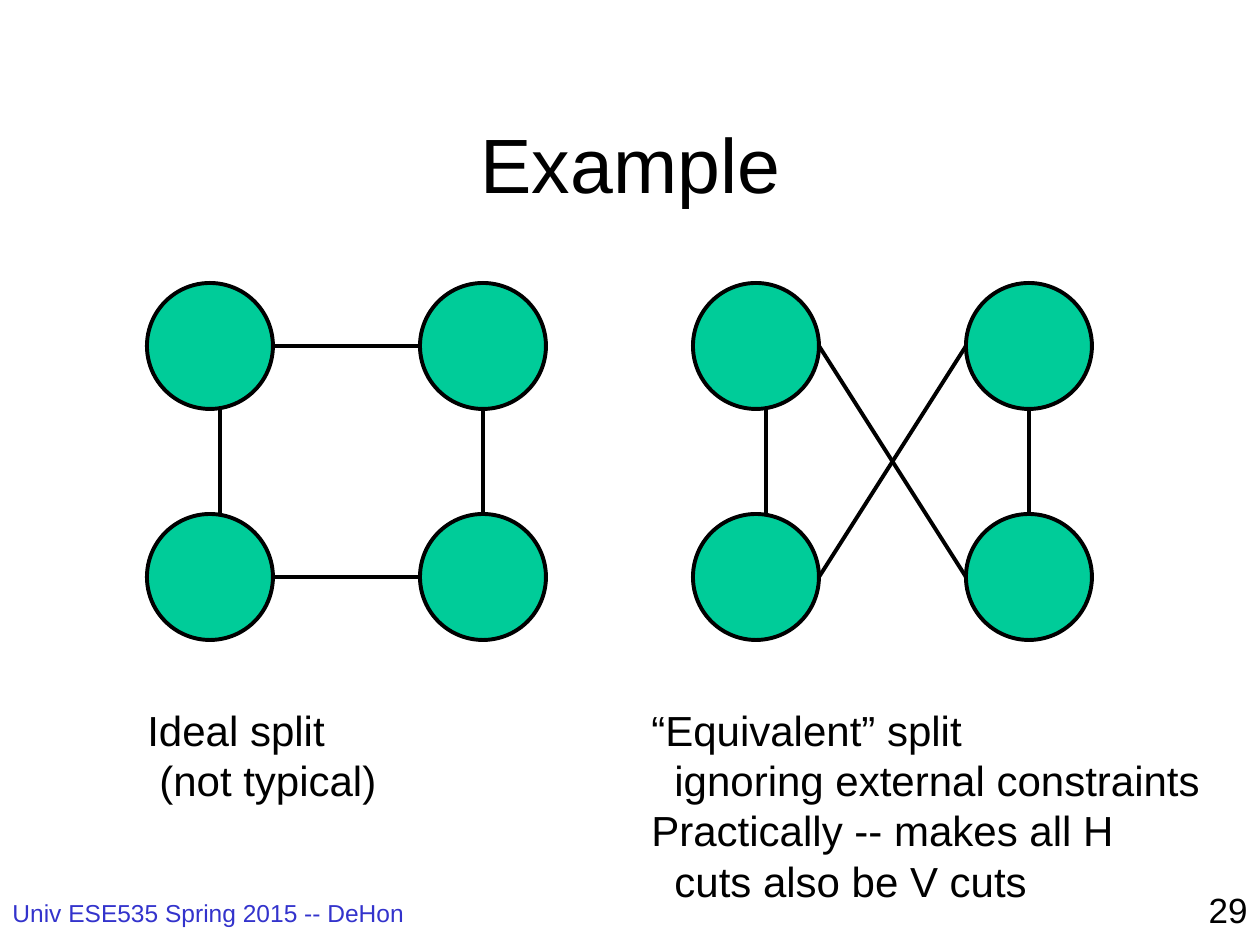
import pptx
import pptx.dml.color
import pptx.enum.shapes
import pptx.enum.text
import pptx.oxml.ns
import pptx.util
import lxml.etree

PX = 914400 / 126
BLACK = pptx.dml.color.RGBColor(0x00, 0x00, 0x00)
BLUE = pptx.dml.color.RGBColor(0x33, 0x33, 0xCC)
GREEN = pptx.dml.color.RGBColor(0x00, 0xCC, 0x99)
ALIGN = pptx.enum.text.PP_ALIGN
ANCHOR = pptx.enum.text.MSO_ANCHOR

DIAMETER = 126
RADIUS = DIAMETER // 2
COLUMN_STEP = 273
ROW_STEP = 231
LEFT_EDGE_X = 73
RIGHT_EDGE_X = COLUMN_STEP + RADIUS
SIDES = [
    ((RIGHT_EDGE_X, DIAMETER), (RIGHT_EDGE_X, ROW_STEP)),
    ((LEFT_EDGE_X, DIAMETER), (LEFT_EDGE_X, ROW_STEP)),
]
TOP_LEFT = (DIAMETER, RADIUS)
TOP_RIGHT = (COLUMN_STEP, RADIUS)
BOTTOM_LEFT = (DIAMETER, ROW_STEP + RADIUS)
BOTTOM_RIGHT = (COLUMN_STEP, ROW_STEP + RADIUS)


def emu(*pixels):
    return [pptx.util.Emu(round(value * PX)) for value in pixels]


def apply_format(target, values):
    for name, value in values.items():
        setattr(target, name, value)


def style_line(line):
    line.color.rgb = BLACK
    line.width = pptx.util.Pt(2.25)


def add_text(slide, box, lines, size, color=BLACK, align=ALIGN.LEFT, **frame_format):
    frame = slide.shapes.add_textbox(*emu(*box)).text_frame
    apply_format(frame, {"word_wrap": True, **frame_format})
    for index, (text, indent) in enumerate(lines):
        paragraph = frame.paragraphs[0] if index == 0 else frame.add_paragraph()
        paragraph.alignment = align
        if indent:
            paragraph._p.get_or_add_pPr().set("marL", str(emu(indent)[0]))
        run = paragraph.add_run()
        run.text = text
        apply_format(run.font, {"name": "Arial", "size": pptx.util.Pt(size)})
        run.font.color.rgb = color


def add_edge(slide, left, top, start, end):
    points = emu(left + start[0], top + start[1], left + end[0], top + end[1])
    connector = slide.shapes.add_connector(
        pptx.enum.shapes.MSO_CONNECTOR.STRAIGHT, *points)
    style_line(connector.line)
    lxml.etree.SubElement(
        connector._element.spPr, pptx.oxml.ns.qn("a:effectLst"))


def add_graph(slide, left, top, edges):
    for row in range(2):
        for column in range(2):
            node = slide.shapes.add_shape(
                pptx.enum.shapes.MSO_SHAPE.OVAL,
                *emu(left + column * COLUMN_STEP, top + row * ROW_STEP,
                     DIAMETER, DIAMETER))
            node.shadow.inherit = False
            node.fill.solid()
            node.fill.fore_color.rgb = GREEN
            style_line(node.line)
    for start, end in SIDES + edges:
        add_edge(slide, left, top, start, end)


def add_caption(slide, box, lines):
    add_text(slide, box, lines, 24, word_wrap=False,
             auto_size=pptx.enum.text.MSO_AUTO_SIZE.SHAPE_TO_FIT_TEXT)


def add_footer(slide, top, width):
    add_text(slide, (0, top + 10, 483, 53),
             [("Univ ESE535 Spring 2015 -- DeHon", 0)], 14, BLUE)
    add_text(slide, (width - 262, top, 262, 63), [("29", 0)], 20, align=ALIGN.RIGHT)


def main():
    presentation = pptx.Presentation()
    presentation.slide_width, presentation.slide_height = emu(1260, 945)
    slide = presentation.slides.add_slide(presentation.slide_layouts[6])
    add_footer(slide, 882, 1260)
    add_text(slide, (95, 84, 1071, 158), [("Example", 0)], 44,
             align=ALIGN.CENTER, vertical_anchor=ANCHOR.MIDDLE)
    add_graph(slide, 147, 283, [(TOP_LEFT, TOP_RIGHT), (BOTTOM_LEFT, BOTTOM_RIGHT)])
    add_caption(slide, (135, 698, 255, 113),
                [("Ideal split", 0), ("(not typical)", 12)])
    add_graph(slide, 693, 283, [(BOTTOM_LEFT, TOP_RIGHT), (TOP_LEFT, BOTTOM_RIGHT)])
    add_caption(slide, (639, 698, 575, 214),
                [("“Equivalent” split", 0), ("ignoring external constraints", 23),
                 ("Practically -- makes all H", 0), ("cuts also be V cuts", 23)])
    presentation.save("out.pptx")


if __name__ == "__main__":
    main()
